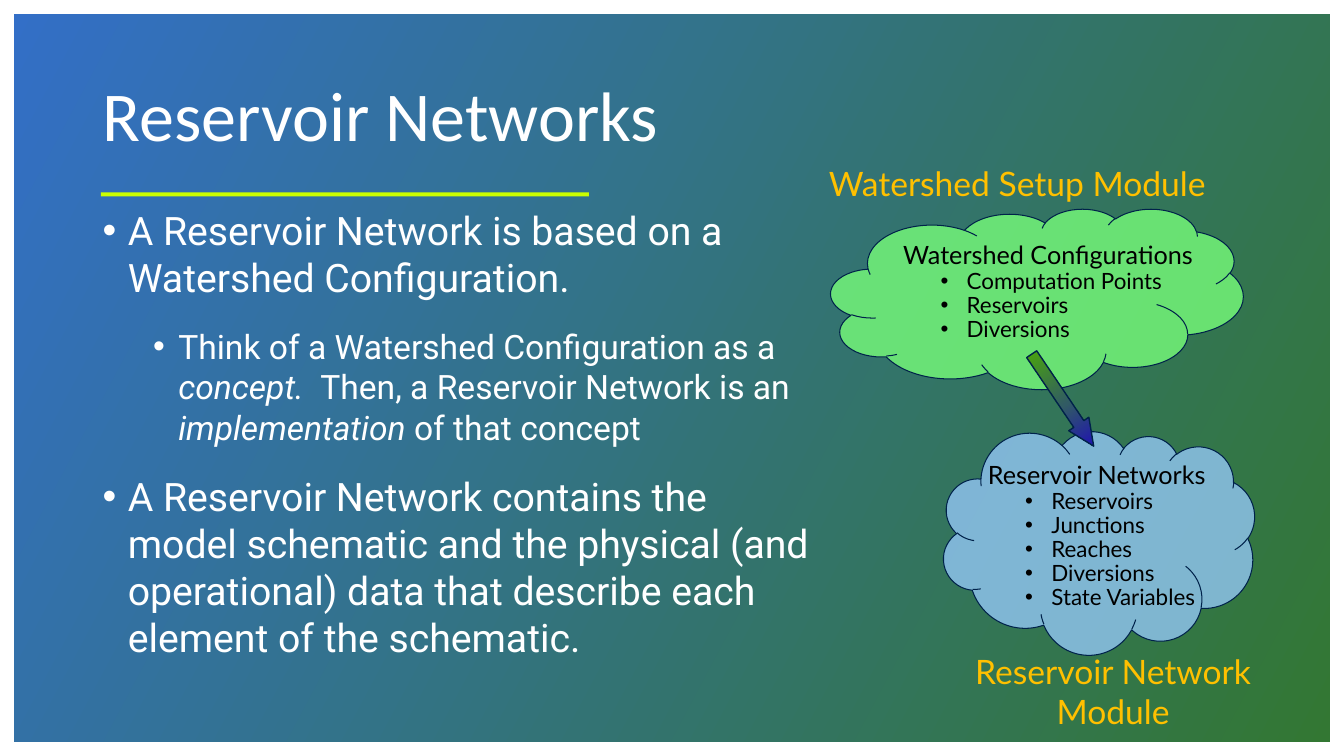
import pptx
import pptx.util
import pptx.dml.color
import pptx.enum.shapes
import pptx.enum.text
import pptx.oxml.ns
import lxml.etree

PX = 9144
SLIDE = (1333, 750)
WHITE, BLACK, GOLD, LIME, NAVY = "FFFFFF", "000000", "FFC000", "CBFF00", "00224A"

BACKDROP = [(0, "004CB9", 80), (100, "005500", 80)]
ARROW_STOPS = [(0, "4CAC04", 100), (54, "315B64", 100), (100, "1B04C2", 100)]

TITLE = {"size": 50, "name": "Calibri", "color": WHITE}
POINT = {"size": 28, "name": "Roboto", "color": WHITE, "space_before": 18, "indent": (25, 25)}
SUBPOINT = {**POINT, "size": 24, "indent": (75, 25), "level": 1}
FIRST_POINT = {**POINT, "space_before": 0}
HEADING = {"size": 18, "name": "Lato", "color": BLACK, "line_spacing": 0.9}
ITEM = {**HEADING, "size": 16, "indent": (63, 26)}
LABEL = {"size": 24, "name": "Lato", "color": GOLD, "alignment": pptx.enum.text.PP_ALIGN.CENTER}

BODY = [
    (FIRST_POINT, ["A Reservoir Network is based on a Watershed Configuration."]),
    (SUBPOINT, ["Think of a Watershed Configuration as a", " concept.  ",
                "Then, a Reservoir Network is an ", "implementation", " of that concept"]),
    (POINT, ["A Reservoir Network contains the model schematic and the physical (and operational) "
             "data that describe each element of the schematic."]),
]
CLOUDS = [
    {"place": (935, 424, 309, 226), "turn": 11.5, "fill": ("99CCFF", 75),
     "text_place": (970, 454, 249, 159), "heading": "Reservoir Networks",
     "items": ["Reservoirs", "Junctions", "Reaches", "Diversions", "State Variables"]},
    {"place": (824, 207, 409, 179), "turn": 0, "fill": ("77FD7A", 80),
     "text_place": (886, 236, 365, 110), "heading": "Watershed Configurations",
     "items": ["Computation Points", "Reservoirs", "Diversions"]},
]
LABELS = [
    ("Watershed Setup Module", (806, 157, 406, 50)),
    ("Reservoir Network Module", (901, 641, 406, 50)),
]

SHAPES = pptx.enum.shapes.MSO_SHAPE
ANCHORS = pptx.enum.text.MSO_ANCHOR


def color(value):
    return pptx.dml.color.RGBColor.from_string(value)


def add_element(parent, tag, **attributes):
    element = lxml.etree.SubElement(parent, pptx.oxml.ns.qn(tag))
    for key, value in attributes.items():
        element.set(key, str(value))
    return element


def set_alpha(color_element, percent):
    if percent < 100:
        add_element(color_element, "a:alpha", val=percent * 1000)


def add_figure(page, kind, place, fill=None, stops=None, angle=0, line=None, weight=0.75, turn=0):
    figure = page.shapes.add_shape(kind, *[value * PX for value in place])
    figure.shadow.inherit = False
    figure.rotation = turn
    if stops:
        figure.fill.gradient()
        gradient = figure.fill._xPr.find(pptx.oxml.ns.qn("a:gradFill"))
        for child in list(gradient):
            gradient.remove(child)
        stop_list = add_element(gradient, "a:gsLst")
        for position, value, alpha in stops:
            stop = add_element(stop_list, "a:gs", pos=position * 1000)
            set_alpha(add_element(stop, "a:srgbClr", val=value), alpha)
        add_element(gradient, "a:lin", ang=angle * 60000, scaled=0)
    else:
        value, alpha = fill
        figure.fill.solid()
        figure.fill.fore_color.rgb = color(value)
        set_alpha(next(figure.fill._xPr.iter(pptx.oxml.ns.qn("a:srgbClr"))), alpha)
    if line:
        figure.line.color.rgb = color(line)
        figure.line.width = pptx.util.Pt(weight)
    else:
        figure.line.fill.background()
    return figure


def add_text(page, place, paragraphs, anchor=ANCHORS.TOP):
    box = page.shapes.add_textbox(*[value * PX for value in place])
    frame = box.text_frame
    frame.word_wrap = True
    frame.vertical_anchor = anchor
    for index, (style, pieces) in enumerate(paragraphs):
        para = frame.add_paragraph() if index else frame.paragraphs[0]
        for key in ("alignment", "line_spacing", "level"):
            if key in style:
                setattr(para, key, style[key])
        para.space_before = pptx.util.Pt(style.get("space_before", 0))
        if "indent" in style:
            left, hanging = style["indent"]
            properties = para._p.get_or_add_pPr()
            properties.set("marL", str(left * PX))
            properties.set("indent", str(-hanging * PX))
            add_element(properties, "a:buFont", typeface="Arial")
            add_element(properties, "a:buChar", char="•")
        for number, piece in enumerate(pieces):
            span = para.add_run()
            span.text = piece
            span.font.color.rgb = color(style["color"])
            formats = {"size": pptx.util.Pt(style["size"]), "name": style["name"],
                       "italic": number % 2 == 1}
            for key, value in formats.items():
                setattr(span.font, key, value)


def main():
    deck = pptx.Presentation()
    deck.slide_width, deck.slide_height = [value * PX for value in SLIDE]
    page = deck.slides.add_slide(deck.slide_layouts[6])

    add_figure(page, SHAPES.RECTANGLE, (14, 14, 1305, 722), stops=BACKDROP, angle=28)
    add_figure(page, SHAPES.RECTANGLE, (100, 191, 484, 4), fill=(LIME, 100))
    add_text(page, (92, 200, 723, 476), BODY)
    add_text(page, (92, 40, 1150, 145), [(TITLE, ["Reservoir Networks"])], ANCHORS.MIDDLE)

    for cloud in CLOUDS:
        add_figure(page, SHAPES.CLOUD, cloud["place"], fill=cloud["fill"], line=NAVY,
                   turn=cloud["turn"])
        lines = [(HEADING, [cloud["heading"]])] + [(ITEM, [item]) for item in cloud["items"]]
        add_text(page, cloud["text_place"], lines)

    arrow = add_figure(page, SHAPES.RIGHT_ARROW, (999, 385, 110, 24), stops=ARROW_STOPS,
                       line=NAVY, weight=1, turn=56)
    arrow.adjustments[0], arrow.adjustments[1] = 0.5, 1.1

    for text, place in LABELS:
        add_text(page, place, [(LABEL, [text])])

    deck.save("out.pptx")


if __name__ == "__main__":
    main()
